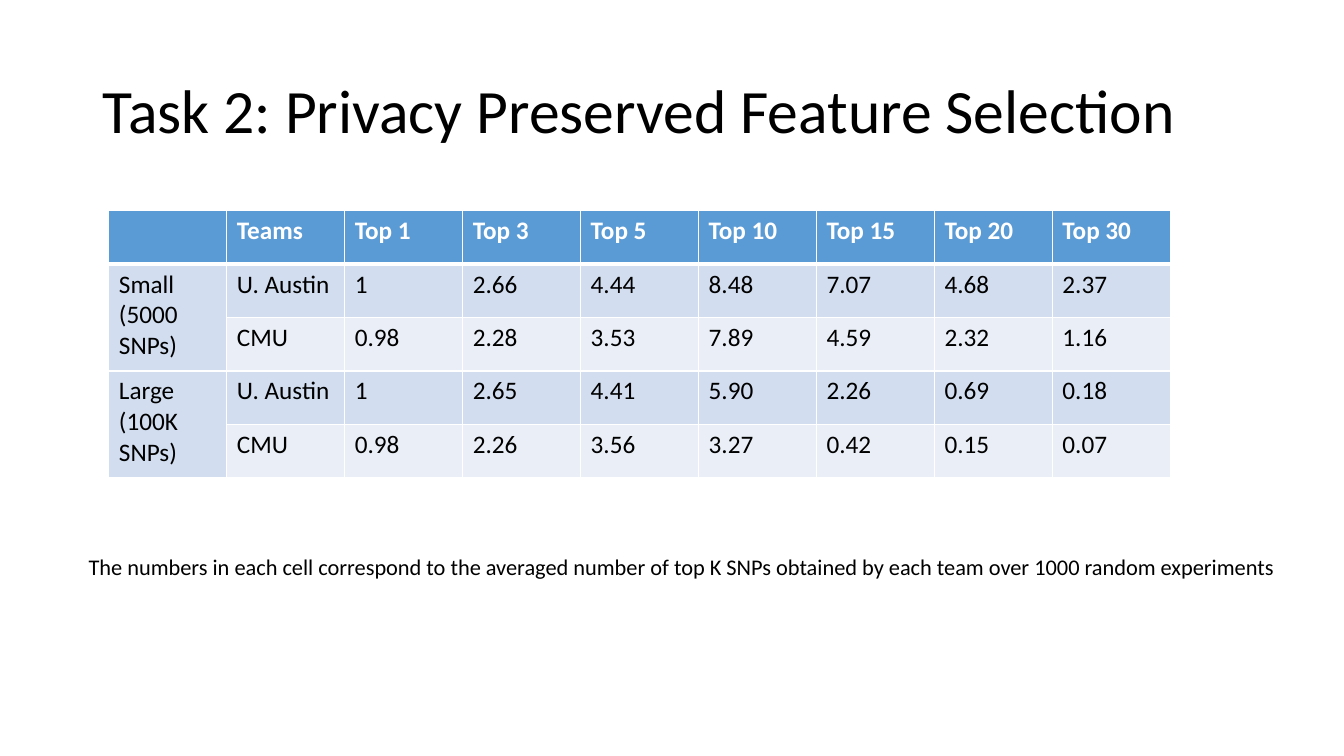
from lxml import etree
from pptx import Presentation
from pptx import util as u
from pptx.dml.color import RGBColor
from pptx.enum import text
from pptx.oxml import ns

PX = 9144
COLORS = {"ink": "000000", "white": "FFFFFF", "header": "5B9BD5",
          "odd": "D2DEEF", "even": "EAEFF7"}
ROWS = [
    ["", "Teams", "Top 1", "Top 3", "Top 5", "Top 10", "Top 15", "Top 20", "Top 30"],
    ["Small\n(5000 SNPs)", "U. Austin", "1", "2.66", "4.44", "8.48", "7.07", "4.68", "2.37"],
    ["", "CMU", "0.98", "2.28", "3.53", "7.89", "4.59", "2.32", "1.16"],
    ["Large (100K SNPs)", "U. Austin", "1", "2.65", "4.41", "5.90", "2.26", "0.69", "0.18"],
    ["", "CMU", "0.98", "2.26", "3.56", "3.27", "0.42", "0.15", "0.07"],
]


class SlideBuilder:
    """Holds the style and the current slide, and adds each kind of element."""

    def __init__(self, deck, font):
        self.font = font
        self.slide = deck.slides.add_slide(deck.slide_layouts[5])

    def fill_text(self, frame, words, size, color="ink", bold=False):
        frame.text = words
        formats = {"name": self.font, "size": u.Pt(size), "bold": bold}
        for para in frame.paragraphs:
            for target in (para, *para.runs):
                for name, value in formats.items():
                    setattr(target.font, name, value)
                target.font.color.rgb = RGBColor.from_string(COLORS[color])

    def title(self, words, left, top, width, height):
        box = self.slide.shapes.title
        place = {"left": left, "top": top, "width": width, "height": height}
        for name, value in place.items():
            setattr(box, name, value * PX)
        box.text_frame.vertical_anchor = text.MSO_ANCHOR.MIDDLE
        self.fill_text(box.text_frame, words, 44)
        para = box.text_frame.paragraphs[0]
        para.alignment = text.PP_ALIGN.LEFT
        para.line_spacing = 0.9

    def caption(self, words, left, top, width, height):
        box = self.slide.shapes.add_textbox(left * PX, top * PX, width * PX, height * PX)
        frame = box.text_frame
        frame.word_wrap = False
        frame.auto_size = text.MSO_AUTO_SIZE.SHAPE_TO_FIT_TEXT
        self.fill_text(frame, words, 16)

    def borders(self, cell, widths):
        properties = cell._tc.get_or_add_tcPr()
        for side, points in widths.items():
            line = etree.SubElement(properties, ns.qn(f"a:ln{side}"), w=str(u.Pt(points)))
            fill = etree.SubElement(line, ns.qn("a:solidFill"))
            etree.SubElement(fill, ns.qn("a:srgbClr"), val=COLORS["white"])

    def table(self, rows, left, top, column, height, merged):
        count = len(rows[0])
        grid = self.slide.shapes.add_table(
            len(rows), count, left * PX, top * PX,
            count * column * PX, len(rows) * height * PX).table
        for part in grid.columns:
            part.width = column * PX
        for part in grid.rows:
            part.height = height * PX
        for r, values in enumerate(rows):
            shade = "header" if r == 0 else "odd" if r % 2 else "even"
            widths = {"L": 1, "R": 1, "T": 3 if r == 1 else 1, "B": 1 if r else 3}
            for c, value in enumerate(values):
                cell = grid.cell(r, c)
                self.borders(cell, widths)
                cell.fill.solid()
                cell.fill.fore_color.rgb = RGBColor.from_string(COLORS[shade])
                self.fill_text(cell.text_frame, value, 18, "ink" if r else "white", r == 0)
        for r in merged:
            grid.cell(r, 0).merge(grid.cell(r + 1, 0))


def main():
    deck = Presentation()
    deck.slide_width, deck.slide_height = u.Inches(13.33), u.Inches(7.5)
    page = SlideBuilder(deck, "Calibri")
    page.title("Task 2: Privacy Preserved Feature Selection", 92, 40, 1150, 145)
    page.table(ROWS, 108, 209, 117, 53, (1, 3))
    page.caption("The numbers in each cell correspond to the averaged number of top K SNPs "
                 "obtained by each team over 1000 random experiments", 78, 544, 1212, 37)
    deck.save("out.pptx")


if __name__ == "__main__":
    main()
